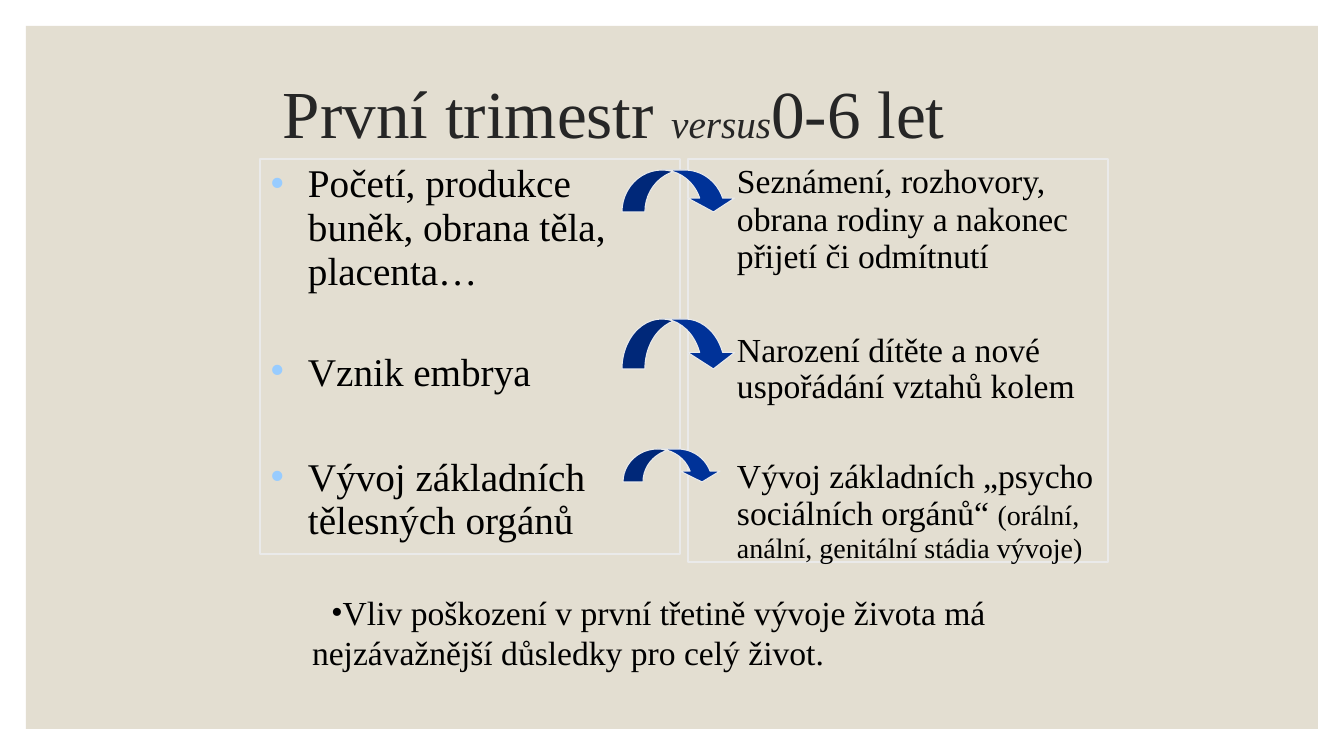
from lxml.etree import SubElement
from pptx import Presentation
from pptx.dml.color import RGBColor
from pptx.enum.shapes import MSO_SHAPE
from pptx.enum.text import MSO_ANCHOR
from pptx.oxml.ns import qn
from pptx.util import Pt

WHITE = RGBColor(0xFF, 0xFF, 0xFF)
SAND = RGBColor(0xE3, 0xDE, 0xD1)
FRAME = RGBColor(0xEA, 0xEA, 0xEA)
CHARCOAL = RGBColor(0x26, 0x26, 0x26)
BLACK = RGBColor(0x00, 0x00, 0x00)
SKY = RGBColor(0x98, 0xCC, 0xFF)
NAVY = RGBColor(0x00, 0x32, 0x98)


class TrimesterSlide:
    font = "Times New Roman"
    scale = 914400 / 100.8

    def __init__(self, presentation):
        presentation.slide_width = self.emu(1344)
        presentation.slide_height = self.emu(756)
        self.slide = presentation.slides.add_slide(presentation.slide_layouts[6])
        background = self.slide.background.fill
        background.solid()
        background.fore_color.rgb = WHITE

    def emu(self, px):
        return round(px * self.scale)

    def shape(self, kind, box, fill=None, line=None):
        shape = self.slide.shapes.add_shape(kind, *map(self.emu, box))
        shape.shadow.inherit = False
        if fill is None:
            shape.fill.background()
        else:
            shape.fill.solid()
            shape.fill.fore_color.rgb = fill
        if line is None:
            shape.line.fill.background()
        else:
            shape.line.color.rgb = line
            shape.line.width = Pt(0.8)
        return shape

    def curved_arrow(self, box, stem, head):
        arrow = self.shape(MSO_SHAPE.CURVED_DOWN_ARROW, box, NAVY, FRAME)
        height = box[3]
        arrow.adjustments[0] = stem / height
        arrow.adjustments[1] = head / height
        arrow.adjustments[2] = 0.33

    def text_box(self, box, top=0, anchor=MSO_ANCHOR.TOP):
        text_frame = self.slide.shapes.add_textbox(*map(self.emu, box)).text_frame
        text_frame.word_wrap = True
        text_frame.vertical_anchor = anchor
        text_frame.margin_left = text_frame.margin_right = text_frame.margin_bottom = 0
        text_frame.margin_top = self.emu(top)
        return text_frame

    def fill_paragraph(self, paragraph, runs, color=BLACK, spacing=None, before=0, margin=0, indent=0):
        for text, size, italic in runs:
            run = paragraph.add_run()
            run.text = text
            run.font.name = self.font
            run.font.size = Pt(size)
            run.font.italic = italic
            run.font.color.rgb = color
        paragraph.line_spacing = spacing
        paragraph.space_before = Pt(before)
        properties = paragraph._p.get_or_add_pPr()
        properties.set("marL", str(self.emu(margin)))
        properties.set("indent", str(self.emu(indent)))

    def bullet(self, paragraph, color, percent):
        properties = paragraph._p.get_or_add_pPr()
        bullet_color = SubElement(properties, qn("a:buClr"))
        SubElement(bullet_color, qn("a:srgbClr"), val=str(color))
        SubElement(properties, qn("a:buSzPct"), val=str(percent * 1000))
        SubElement(properties, qn("a:buFont"), typeface=self.font)
        SubElement(properties, qn("a:buChar"), char="•")


def main():
    presentation = Presentation()
    page = TrimesterSlide(presentation)
    page.shape(MSO_SHAPE.RECTANGLE, (26, 26, 1292, 703), SAND)

    title = page.text_box((282, 70, 714, 83), 1, MSO_ANCHOR.MIDDLE)
    title_runs = [("První trimestr ", 48, False), ("versus", 28, True), ("0-6 let", 48, False)]
    page.fill_paragraph(title.paragraphs[0], title_runs, CHARCOAL, before=1, margin=1)

    for frame in ((260, 159, 420, 395), (688, 159, 420, 403)):
        page.shape(MSO_SHAPE.RECTANGLE, frame, line=FRAME)

    pregnancy_stages = [
        ("Početí, produkce buněk, obrana těla, placenta…", (269, 157, 342, 134), 6, 0.93, 4.3),
        ("Vznik embrya", (269, 346, 262, 50), 1, 1.0, 1),
        ("Vývoj základních tělesných orgánů", (269, 450, 318, 93), 7, Pt(30.4), 4.7),
    ]
    for text, box, top, spacing, before in pregnancy_stages:
        paragraph = page.text_box(box, top).paragraphs[0]
        page.fill_paragraph(paragraph, [(text, 28, False)], BLACK, spacing, before, 39, -38)
        page.bullet(paragraph, SKY, 109)

    family_stages = [
        ([("Seznámení, rozhovory, obrana rodiny a nakonec přijetí či odmítnutí", 24, False)], 0.93, 4),
        ([("Narození dítěte a nové uspořádání vztahů kolem", 24, False)], Pt(26), 40),
        ([("Vývoj základních „psycho sociálních orgánů“ ", 24, False),
          ("(orální, anální, genitální stádia vývoje)", 20, False)], 0.93, 38),
    ]
    family = page.text_box((698, 158, 400, 403), 6)
    for index, (runs, spacing, before) in enumerate(family_stages):
        paragraph = family.add_paragraph() if index else family.paragraphs[0]
        page.fill_paragraph(paragraph, runs, BLACK, spacing, before, 39)

    conclusion = page.text_box((311, 591, 680, 84), 1).paragraphs[0]
    conclusion_text = "Vliv poškození v první třetině vývoje života má nejzávažnější důsledky pro celý život."
    page.fill_paragraph(conclusion, [(conclusion_text, 24, False)], before=1, margin=1, indent=19)
    page.bullet(conclusion, BLACK, 100)

    page.curved_arrow((622, 170, 115, 42), 23, 47)
    page.curved_arrow((622, 319, 115, 50), 23, 47)
    page.curved_arrow((623, 449, 99, 33), 20, 40)

    presentation.save("out.pptx")


if __name__ == "__main__":
    main()
